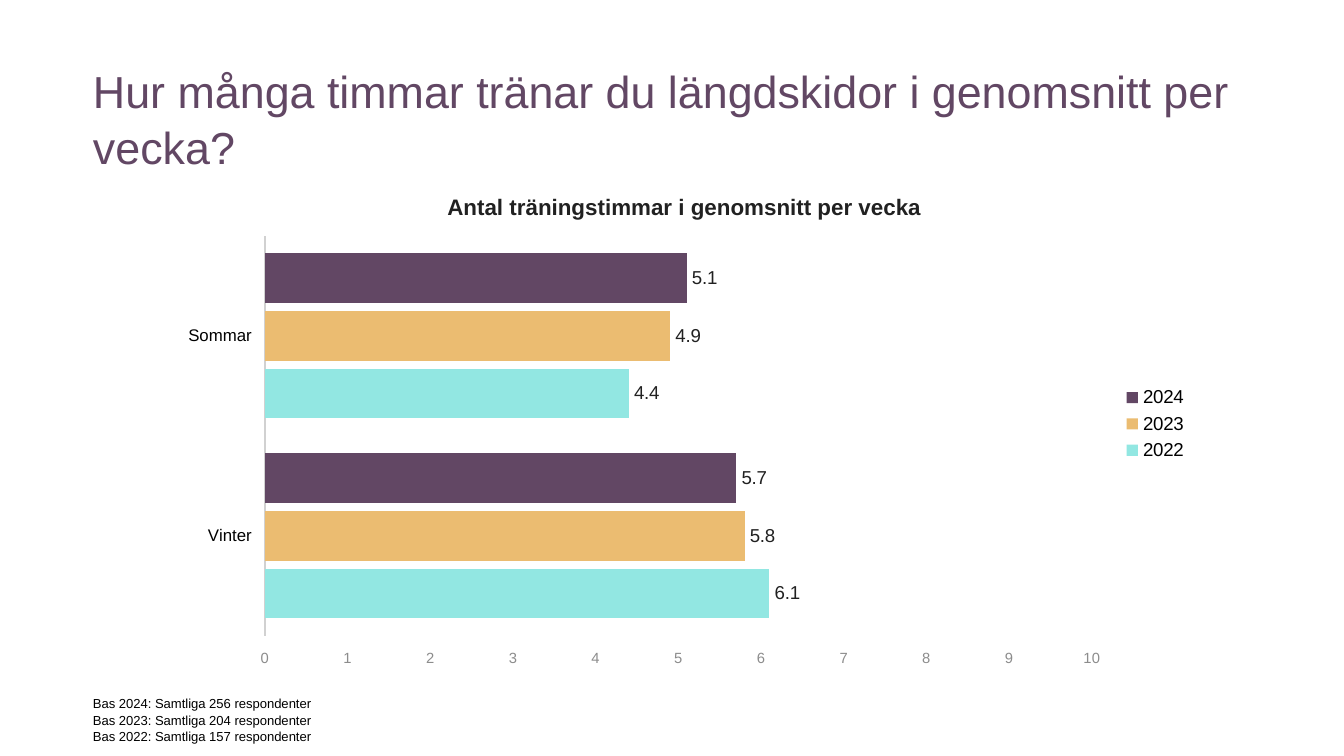
from lxml import etree
from pptx import Presentation
from pptx.chart.data import CategoryChartData
from pptx.dml.color import RGBColor
from pptx.enum.chart import (XL_CHART_TYPE, XL_LABEL_POSITION as LabelPos,
                             XL_LEGEND_POSITION as LegendPos,
                             XL_TICK_LABEL_POSITION as TickLabelPos,
                             XL_TICK_MARK as TickMark)
from pptx.enum.text import MSO_ANCHOR as Anchor
from pptx.oxml.ns import qn
from pptx.util import Emu, Pt

EMU_PER_PX = 914400 / 134.4
FONT = "Arial"
PURPLE = "624764"
CATEGORIES = ["Vinter", "Sommar"]
YEARS = [("2022", [6.1, 4.4], "92E7E2"),
         ("2023", [5.8, 4.9], "EBBC71"),
         ("2024", [5.7, 5.1], PURPLE)]
RESPONDENTS = [("2024", 256), ("2023", 204), ("2022", 157)]


def px(length):
    return Emu(round(length * EMU_PER_PX))


def color(value):
    return RGBColor.from_string(value)


def style_font(font, size, hex_color, bold=False):
    font.name, font.size, font.bold = FONT, Pt(size), bold
    font.color.rgb = color(hex_color)


def add_text(slide, box, lines, size, hex_color, anchor=Anchor.TOP):
    frame = slide.shapes.add_textbox(*map(px, box)).text_frame
    frame.word_wrap = True
    frame.vertical_anchor = anchor
    frame.margin_left = frame.margin_right = 0
    frame.margin_top = frame.margin_bottom = 0
    for index, line in enumerate(lines):
        paragraph = frame.paragraphs[0] if index == 0 else frame.add_paragraph()
        paragraph.line_spacing = 1.05
        run = paragraph.add_run()
        run.text = line
        style_font(run.font, size, hex_color)


def place_plot(chart, box, plot_box):
    """Fix the inner plot area, both boxes given on the slide."""
    left, top, width, height = box
    x, y, w, h = plot_box
    plot_area = chart.plots[0]._element.getparent()
    for old in plot_area.findall(qn("c:layout")):
        plot_area.remove(old)
    layout = etree.Element(qn("c:layout"))
    manual = etree.SubElement(layout, qn("c:manualLayout"))
    settings = [("layoutTarget", "inner"), ("xMode", "edge"), ("yMode", "edge"),
                ("x", (x - left) / width), ("y", (y - top) / height),
                ("w", w / width), ("h", h / height)]
    for tag, value in settings:
        etree.SubElement(manual, qn(f"c:{tag}"), val=str(value))
    plot_area.insert(0, layout)


def add_training_chart(slide, box, plot_box):
    data = CategoryChartData(number_format="0.0")
    data.categories = CATEGORIES
    for year, hours, _ in YEARS:
        data.add_series(year, hours)
    chart = slide.shapes.add_chart(
        XL_CHART_TYPE.BAR_CLUSTERED, *map(px, box), data).chart
    style_font(chart.font, 10, "212121")
    place_plot(chart, box, plot_box)

    # Chart title
    chart.has_title = True
    chart.chart_title.include_in_layout = False
    run = chart.chart_title.text_frame.paragraphs[0].add_run()
    run.text = "Antal träningstimmar i genomsnitt per vecka"
    style_font(run.font, 12, "212121", bold=True)

    # Legend
    chart.has_legend = True
    chart.legend.position = LegendPos.RIGHT
    chart.legend.include_in_layout = False
    style_font(chart.legend.font, 10, "000000")

    # Axes
    seasons, hours_axis = chart.category_axis, chart.value_axis
    for axis, size, hex_color in ((seasons, 9, "000000"), (hours_axis, 7.9, "8C8C8C")):
        axis.has_major_gridlines = False
        axis.major_tick_mark = axis.minor_tick_mark = TickMark.NONE
        axis.tick_label_position = TickLabelPos.LOW
        style_font(axis.tick_labels.font, size, hex_color)
    seasons.format.line.color.rgb = color("D1D1D1")
    seasons.format.line.width = Pt(0.75)
    hours_axis.format.line.fill.background()
    hours_axis.minimum_scale, hours_axis.maximum_scale = 0, 10
    hours_axis.major_unit = 1
    hours_axis.tick_labels.number_format = "General"
    hours_axis.tick_labels.number_format_is_linked = False

    # Bars and their values
    plot = chart.plots[0]
    plot.vary_by_categories = False
    plot.gap_width, plot.overlap = 70, -16
    for series, (_, _, hex_color) in zip(plot.series, YEARS):
        series.format.fill.solid()
        series.format.fill.fore_color.rgb = color(hex_color)
        labels = series.data_labels
        labels.show_value = True
        labels.position = LabelPos.OUTSIDE_END
        labels.number_format = "0.0"
        labels.number_format_is_linked = False
        style_font(labels.font, 10, "212121")


def main():
    presentation = Presentation()
    presentation.slide_width, presentation.slide_height = px(1344), px(756)
    slide = presentation.slides.add_slide(presentation.slide_layouts[6])

    # Question
    add_text(slide, (93, 62, 1153, 110),
             ["Hur många timmar tränar du längdskidor i genomsnitt per vecka?"],
             24, PURPLE, Anchor.MIDDLE)
    # Hours per season and year
    add_training_chart(slide, (168, 172, 1033, 504), (265, 236, 827, 400))
    # Respondent base
    add_text(slide, (93, 695, 242, 42),
             [f"Bas {year}: Samtliga {count} respondenter" for year, count in RESPONDENTS],
             7, "000000")
    presentation.save("out.pptx")


if __name__ == "__main__":
    main()
